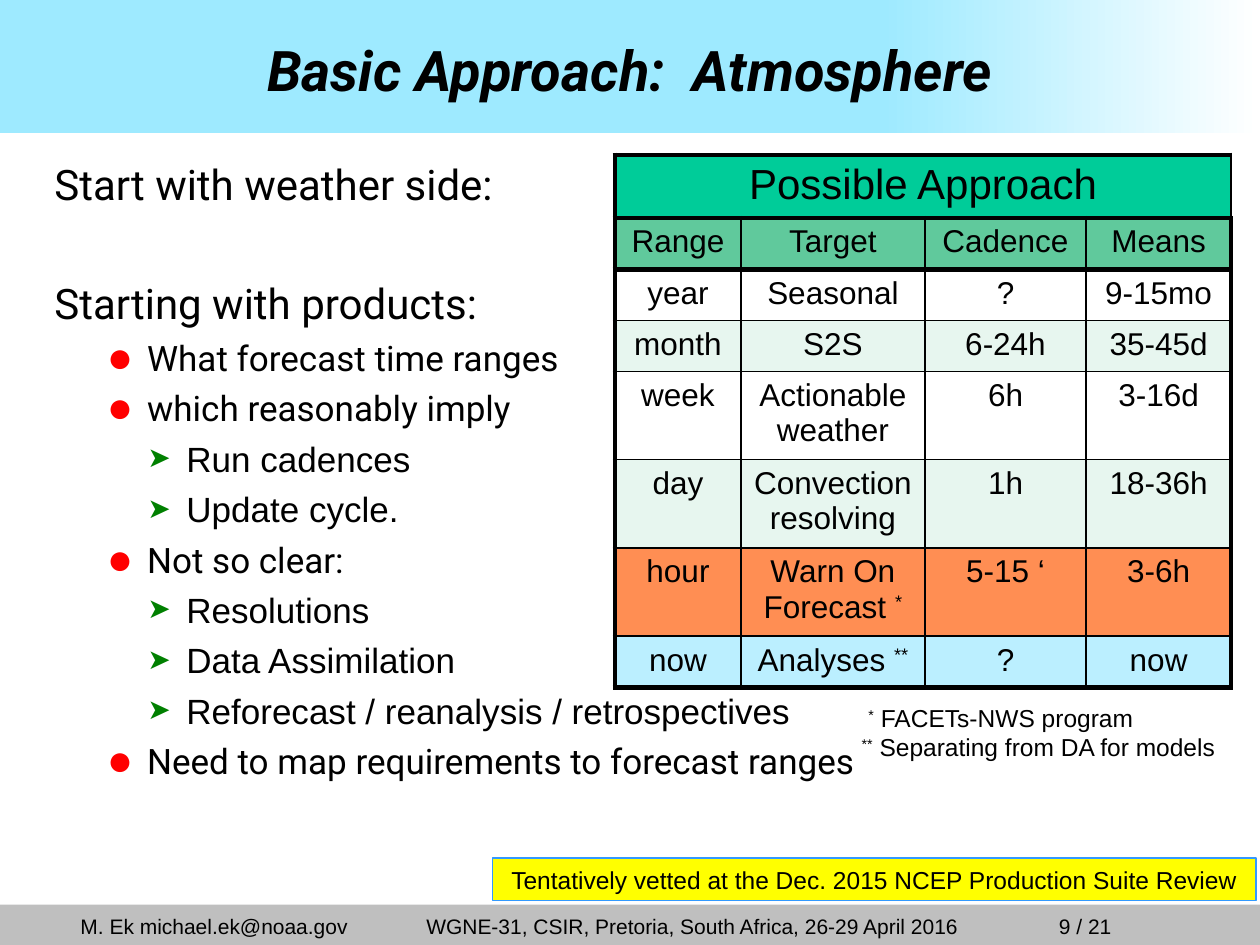
"""Build the slide on the basic approach to atmosphere forecasting."""
import itertools

import pptx
import pptx.dml.color
import pptx.enum.shapes
import pptx.enum.text
import pptx.oxml
import pptx.oxml.ns
import pptx.util

Pt = pptx.util.Pt
ALIGN = pptx.enum.text.PP_ALIGN
ANCHOR = pptx.enum.text.MSO_ANCHOR

COLORS = {
    "text": "000000", "sky": "9EEAFF", "white": "FFFFFF", "footer": "BFBFBF",
    "title_row": "00CC99", "header_row": "60C99C", "pale_row": "E7F6EF",
    "hour_row": "FF8E53", "now_row": "BBEFFF", "notice": "FFFF00",
    "notice_line": "3399FF", "dot": "FF0000", "arrow": "008000",
}
BULLETS = {
    1: {"char": "●", "color": "dot", "size": 125, "margin": 59, "hanging": 23},
    2: {"char": "➤", "color": "arrow", "size": 80, "margin": 81.4, "hanging": 22.3},
}
BODY = [
    (0, "Start with weather side:"),
    (0, "Starting with products:"),
    (1, "What forecast time ranges"),
    (1, "which reasonably imply"),
    (2, "Run cadences"),
    (2, "Update cycle."),
    (1, "Not so clear:"),
    (2, "Resolutions"),
    (2, "Data Assimilation"),
    (2, "Reforecast / reanalysis / retrospectives"),
    (1, "Need to map requirements to forecast ranges"),
]
TABLE = [
    ("title_row", 33.7, ["Possible Approach", "", "", ""]),
    ("header_row", 29.2, ["Range", "Target", "Cadence", "Means"]),
    ("white", 29.2, ["year", "Seasonal", "?", "9-15mo"]),
    ("pale_row", 29.2, ["month", "S2S", "6-24h", "35-45d"]),
    ("white", 47.4, ["week", "Actionable weather", "6h", "3-16d"]),
    ("pale_row", 47.4, ["day", "Convection resolving", "1h", "18-36h"]),
    ("hour_row", 47.4, ["hour", "Warn On Forecast *", "5-15 ‘", "3-6h"]),
    ("now_row", 29.2, ["now", "Analyses **", "?", "now"]),
]
COLUMN_WIDTHS = [72, 105.1, 92.2, 82.8]


def rgb(name):
    """Return the named colour."""
    return pptx.dml.color.RGBColor.from_string(COLORS[name])


def style(font, size, name="Arial"):
    """Set size, typeface and text colour of a font."""
    font.size = Pt(size)
    font.name = name
    font.color.rgb = rgb("text")


def write(paragraph, text, size, align=ALIGN.LEFT):
    """Write text in Arial with its asterisks raised."""
    paragraph.alignment = align
    for is_marker, letters in itertools.groupby(text, lambda letter: letter == "*"):
        run = paragraph.add_run()
        run.text = "".join(letters)
        style(run.font, size)
        if is_marker:
            run.font._element.set("baseline", "30000")


def add_text(slide, box, text, size, align=ALIGN.LEFT, anchor=ANCHOR.TOP):
    """Add a wrapped text box and return its first paragraph."""
    frame = slide.shapes.add_textbox(*map(Pt, box)).text_frame
    frame.word_wrap = True
    frame.vertical_anchor = anchor
    write(frame.paragraphs[0], text, size, align)
    return frame.paragraphs[0]


def add_rectangle(slide, box, color):
    """Add a plain filled rectangle."""
    shape = slide.shapes.add_shape(
        pptx.enum.shapes.MSO_SHAPE.RECTANGLE, *map(Pt, box))
    shape.shadow.inherit = False
    shape.fill.solid()
    shape.fill.fore_color.rgb = rgb(color)
    shape.line.fill.background()
    return shape


def add_title(slide):
    """Add the gradient band and the title."""
    band = add_rectangle(slide, (-1.4, 0, 721.4, 76.3), "sky")
    band.fill.gradient()
    band.fill.gradient_angle = 0
    for stop, position, color in zip(
            band.fill.gradient_stops, (0.7, 1), ("sky", "white")):
        stop.position = position
        stop.color.rgb = rgb(color)
    title = add_text(slide, (18, 11.5, 684, 56.2), "Basic Approach:  Atmosphere",
                     32, ALIGN.CENTER, ANCHOR.MIDDLE)
    font = title.runs[0].font
    font.name = "Roboto"
    font.bold = font.italic = True


def add_footer(slide):
    """Add the footer bar with its three texts."""
    add_rectangle(slide, (-1.4, 517, 721.4, 26.6), "footer")
    for left, width, text, align in [
        (38.9, 176.4, "M. Ek michael.ek@noaa.gov", ALIGN.LEFT),
        (234, 323.3, "WGNE-31, CSIR, Pretoria, South Africa, 26-29 April 2016",
         ALIGN.CENTER),
        (576.7, 65.5, "9 / 21", ALIGN.RIGHT),
    ]:
        add_text(slide, (left, 518.4, width, 21.6), text, 12, align, ANCHOR.BOTTOM)


def set_bullet(paragraph, level):
    """Give a paragraph the bullet and hanging indent of its level."""
    bullet = BULLETS[level]
    paragraph.level = level
    properties = paragraph._p.get_or_add_pPr()
    properties.set("marL", str(Pt(bullet["margin"])))
    properties.set("indent", str(-Pt(bullet["hanging"])))
    space = pptx.oxml.ns.nsdecls("a")
    for xml in (
        f'<a:buClr {space}><a:srgbClr val="{COLORS[bullet["color"]]}"/></a:buClr>',
        f'<a:buSzPct {space} val="{bullet["size"] * 1000}"/>',
        f'<a:buFont {space} typeface="Arial"/>',
        f'<a:buChar {space} char="{bullet["char"]}"/>',
    ):
        properties.append(pptx.oxml.parse_xml(xml))


def add_body(slide):
    """Add the outline on the left."""
    frame = slide.shapes.add_textbox(Pt(18), Pt(87), Pt(661.7), Pt(430)).text_frame
    frame.word_wrap = True
    for index, (level, text) in enumerate(BODY):
        paragraph = frame.add_paragraph() if index else frame.paragraphs[0]
        paragraph.text = text
        if level:
            set_bullet(paragraph, level)
            paragraph.space_before = Pt(4.8)
        else:
            paragraph._p.get_or_add_pPr().set("marL", str(Pt(6)))
            paragraph.space_before = Pt(39.3 if index else 0)
        style(paragraph.runs[0].font, 20 if level else 24,
              "Arial" if level == 2 else "Roboto")


def set_borders(cell, widths):
    """Draw the left, right, top and bottom borders of a cell."""
    properties = cell._tc.get_or_add_tcPr()
    for side, width in zip("LRTB", widths):
        properties.append(pptx.oxml.parse_xml(
            f'<a:ln{side} {pptx.oxml.ns.nsdecls("a")} w="{Pt(width)}"><a:solidFill>'
            f'<a:srgbClr val="{COLORS["text"]}"/></a:solidFill></a:ln{side}>'))


def add_approach_table(slide):
    """Add the table of ranges, targets, cadences and means."""
    last_row, last_column = len(TABLE) - 1, len(COLUMN_WIDTHS) - 1
    table = slide.shapes.add_table(
        len(TABLE), len(COLUMN_WIDTHS), Pt(351.4), Pt(88.6),
        Pt(sum(COLUMN_WIDTHS)), Pt(sum(height for _, height, _ in TABLE))).table
    for column, width in zip(table.columns, COLUMN_WIDTHS):
        column.width = Pt(width)
    for row, (color, height, texts) in enumerate(TABLE):
        table.rows[row].height = Pt(height)
        for column, text in enumerate(texts):
            cell = table.cell(row, column)
            thick = (column == 0, column == last_column,
                     row <= 2, row <= 1 or row == last_row)
            set_borders(cell, [3 if side else 1 for side in thick])
            cell.fill.solid()
            cell.fill.fore_color.rgb = rgb(color)
            write(cell.text_frame.paragraphs[0], text, 18 if row else 24, ALIGN.CENTER)
    table.cell(0, 0).merge(table.cell(0, last_column))


def add_notice(slide):
    """Add the yellow box above the footer."""
    notice = add_rectangle(slide, (281.5, 490.3, 436.3, 24.5), "notice")
    notice.line.color.rgb = rgb("notice_line")
    notice.line.width = Pt(0.75)
    write(notice.text_frame.paragraphs[0],
          "Tentatively vetted at the Dec. 2015 NCEP Production Suite Review",
          14, ALIGN.CENTER)


def main():
    """Build and save the slide."""
    presentation = pptx.Presentation()
    presentation.slide_width, presentation.slide_height = Pt(720), Pt(540)
    slide = presentation.slides.add_slide(presentation.slide_layouts[6])
    add_footer(slide)
    add_title(slide)
    add_body(slide)
    add_approach_table(slide)
    for top, text in ((398.2, " * FACETs-NWS program"),
                      (414.7, "** Separating from DA for models")):
        add_text(slide, (485.3, top, 235.4, 24.5), text, 14)
    add_notice(slide)
    presentation.save("out.pptx")


if __name__ == "__main__":
    main()
